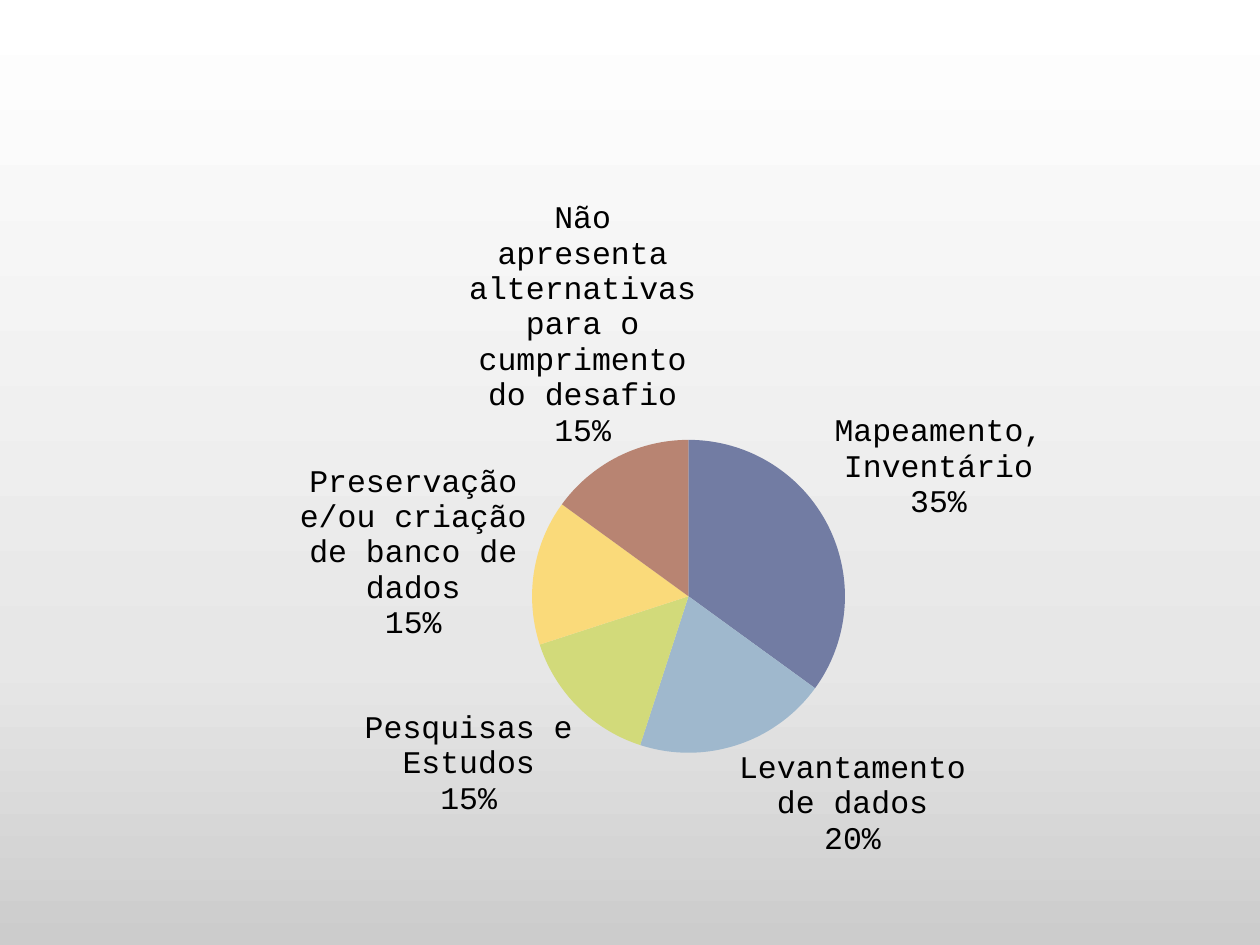
from copy import deepcopy

from lxml import etree
from pptx import Presentation
from pptx import util as u
from pptx.chart import data as chart_data
from pptx.dml.color import RGBColor
from pptx.enum import chart as charts
from pptx.oxml import ns

BLACK = RGBColor(0x00, 0x00, 0x00)
NAVY = RGBColor(0x72, 0x7C, 0xA3)
SKY = RGBColor(0x9F, 0xB8, 0xCD)
LIME = RGBColor(0xD2, 0xDA, 0x7A)
YELLOW = RGBColor(0xFA, 0xDA, 0x7A)
BROWN = RGBColor(0xB8, 0x84, 0x72)
BACKDROP = [
    (0, RGBColor(0xCC, 0xCC, 0xCC)),
    (0.3, RGBColor(0xE7, 0xE7, 0xE7)),
    (1, RGBColor(0xFF, 0xFF, 0xFF)),
]
SHARES = [
    ("Mapeamento, Inventário", 35, NAVY),
    ("Levantamento de dados", 20, SKY),
    ("Pesquisas e Estudos", 15, LIME),
    ("Preservação e/ou criação de banco de dados", 15, YELLOW),
    ("Não apresenta alternativas para o cumprimento do desafio", 15, BROWN),
]


class SlideBuilder:
    """Hold the text style and current page, and add elements to it."""

    font_format = {"name": "Courier New", "size": u.Pt(18), "bold": False}
    label_format = {
        "show_percentage": True,
        "show_category_name": True,
        "show_value": False,
        "show_legend_key": False,
        "number_format": "0%",
        "number_format_is_linked": False,
        "position": charts.XL_LABEL_POSITION.BEST_FIT,
    }

    def __init__(self, deck):
        self.page = deck.slides.add_slide(deck.slide_layouts[6])

    def apply(self, target, values):
        for name, value in values.items():
            setattr(target, name, value)

    def background(self, stops):
        fill = self.page.background.fill
        fill.gradient()
        fill.gradient_angle = 90
        stop_list = self.page.element.xpath(".//p:bg//a:gsLst")[0]
        while len(stop_list) < len(stops):
            stop_list.append(deepcopy(stop_list[0]))
        for stop, (position, color) in zip(fill.gradient_stops, stops):
            stop.position = position
            stop.color.rgb = color

    def pie(self, shares, box, plot_box):
        data = chart_data.CategoryChartData(number_format="0")
        data.categories = [name for name, _, _ in shares]
        data.add_series("", [value for _, value, _ in shares])
        chart = self.page.shapes.add_chart(
            charts.XL_CHART_TYPE.PIE, *map(u.Cm, box), data
        ).chart
        self.apply(chart, {"has_legend": False, "has_title": False})
        self.apply(chart.font, self.font_format)
        chart.font.color.rgb = BLACK
        plot = chart.plots[0]
        self.apply(plot, {"vary_by_categories": True, "has_data_labels": True})
        labels = plot.data_labels
        self.apply(labels, self.label_format)
        self.apply(labels.font, self.font_format)
        labels.font.color.rgb = BLACK
        for index, (_, _, color) in enumerate(shares):
            point = plot.series[0].points[index].format
            point.fill.solid()
            point.fill.fore_color.rgb = color
            point.line.fill.background()
        self.place_plot(chart, plot_box)
        self.break_labels(chart)

    def place_plot(self, chart, plot_box):
        area = chart.element.xpath(".//c:plotArea")[0]
        for old in area.findall(ns.qn("c:layout")):
            area.remove(old)
        layout = etree.Element(ns.qn("c:layout"))
        area.insert(0, layout)
        manual = etree.SubElement(layout, ns.qn("c:manualLayout"))
        settings = {"layoutTarget": "inner", "xMode": "edge", "yMode": "edge"}
        settings.update(zip("xywh", plot_box))
        for name, value in settings.items():
            etree.SubElement(manual, ns.qn(f"c:{name}"), val=str(value))

    def break_labels(self, chart):
        show_bubble = chart.element.xpath(".//c:dLbls/c:showBubbleSize")[0]
        separator = etree.Element(ns.qn("c:separator"))
        separator.text = "\n"
        show_bubble.addnext(separator)


def main():
    deck = Presentation()
    deck.slide_width, deck.slide_height = u.Cm(25.4), u.Cm(19.05)
    builder = SlideBuilder(deck)
    builder.background(BACKDROP)
    builder.pie(SHARES, (0.89, 1.93, 24.51, 15.77), (0.4, 0.44, 0.26, 0.4))
    deck.save("out.pptx")


if __name__ == "__main__":
    main()
